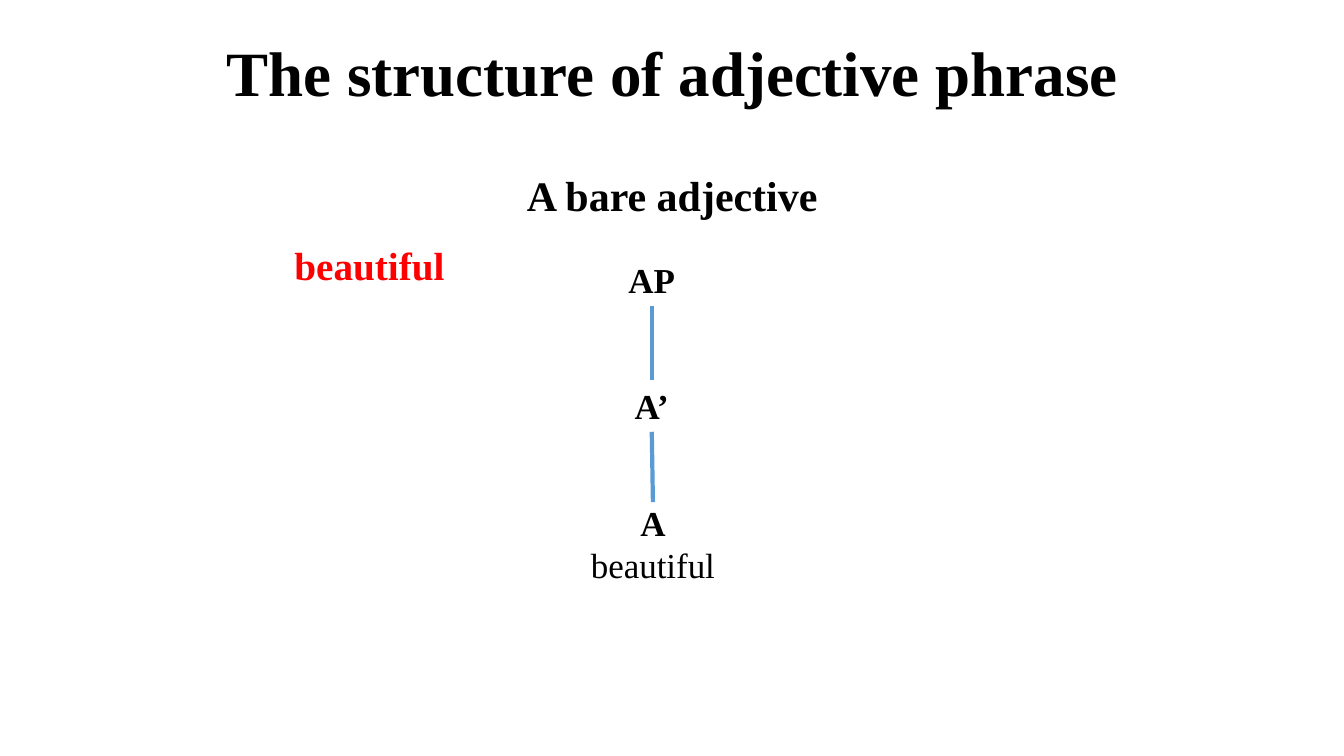
import pptx
import pptx.util
import pptx.dml.color
import pptx.enum.shapes
import pptx.enum.text
import pptx.oxml.ns
import lxml.etree

Cm, Pt = pptx.util.Cm, pptx.util.Pt
Color = pptx.dml.color.RGBColor.from_string
Anchor = pptx.enum.text.MSO_ANCHOR
Align = pptx.enum.text.PP_ALIGN

# Boxes are left, top, width, height in cm
TITLE = ("The structure of adjective phrase", (2.34, 1.02, 29.21, 1.78))
HEAD = ("A bare adjective", (2.34, 4.29, 29.21, 12.98))
SAMPLE = ("beautiful ", (6.4, 6.02, 6.07, 1.3))
TREE = [
    (["AP"], (15.32, 6.4, 2.21, 1.3)),
    (["A’"], (15.32, 9.58, 2.21, 1.3)),
    (["A", "beautiful"], (14.45, 12.65, 4.01, 2.11)),
]

THEME = {
    "font": "Times New Roman",
    "ink": "000000", "mark": "FF0000", "paper": "FFFFFF", "branch": "5B9BD5",
    "title": 45, "head": 30, "sample": 28, "node": 25, "line": 3,
}


def put(item, values):
    for name, value in values.items():
        setattr(item, name, value)


def write(shape, lines, size, ink="ink", anchor=Anchor.MIDDLE, para=None):
    """Fill a shape with centred lines: the first bold, the rest plain."""
    frame = shape.text_frame
    put(frame, {"word_wrap": True, "vertical_anchor": anchor})
    for i, line in enumerate(lines):
        part = frame.add_paragraph() if i else frame.paragraphs[0]
        put(part, {"alignment": Align.CENTER, **(para or {})})
        run = part.add_run()
        run.text = line
        put(run.font, {"name": THEME["font"], "size": Pt(THEME[size]), "bold": i == 0})
        run.font.color.rgb = Color(THEME[ink])


def label(slide, lines, box, size, **style):
    shape = slide.shapes.add_textbox(*map(Cm, box))
    write(shape, lines, size, **style)


def plate(slide, text, box):
    """Add the example word on a paper-coloured rectangle."""
    kind = pptx.enum.shapes.MSO_SHAPE.RECTANGLE
    shape = slide.shapes.add_shape(kind, *map(Cm, box))
    shape.shadow.inherit = False
    shape.fill.solid()
    shape.fill.fore_color.rgb = Color(THEME["paper"])
    shape.line.fill.background()
    write(shape, [text], "sample", ink="mark")


def branch(slide, upper, lower):
    """Join the bottom centre of one box to the top centre of the next."""
    x, y, wide, high = upper
    left, top, span, _ = lower
    ends = (x + wide / 2, y + high, left + span / 2, top)
    kind = pptx.enum.shapes.MSO_CONNECTOR.STRAIGHT
    line = slide.shapes.add_connector(kind, *map(Cm, ends))
    line.line.color.rgb = Color(THEME["branch"])
    line.line.width = Pt(THEME["line"])
    props = line._element.spPr
    lxml.etree.SubElement(props, pptx.oxml.ns.qn("a:effectLst"))


def main():
    deck = pptx.Presentation()
    put(deck, {"slide_width": Cm(33.87), "slide_height": Cm(19.05)})
    slide = deck.slides.add_slide(deck.slide_layouts[6])

    tight = {"line_spacing": 0.9}
    label(slide, [TITLE[0]], TITLE[1], "title", para=tight)
    label(slide, [HEAD[0]], HEAD[1], "head", anchor=Anchor.TOP,
          para={**tight, "space_before": Pt(10)})
    for lines, box in TREE:
        label(slide, lines, box, "node")
    for upper, lower in zip(TREE, TREE[1:]):
        branch(slide, upper[1], lower[1])
    plate(slide, *SAMPLE)

    deck.save("out.pptx")


if __name__ == "__main__":
    main()
